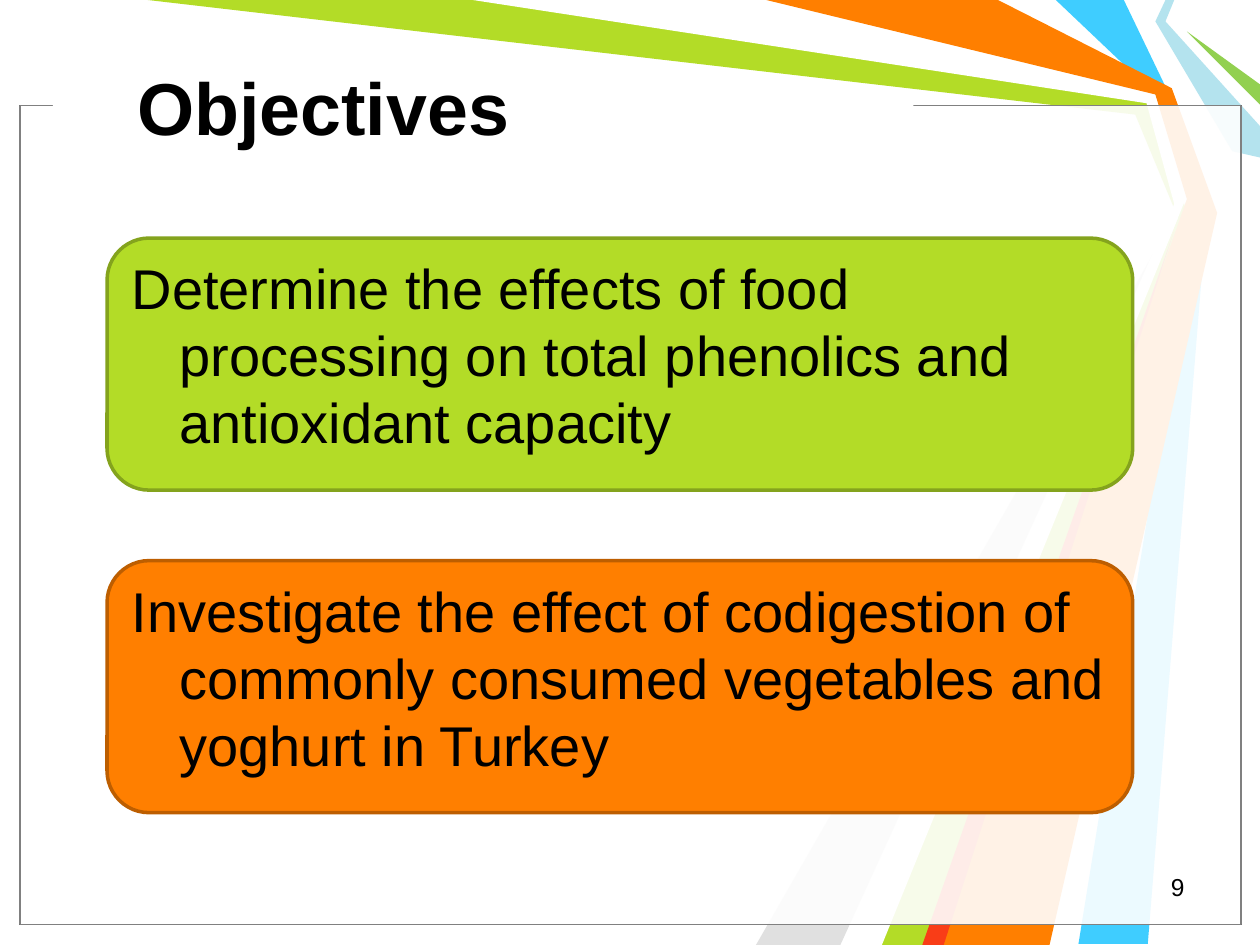
from pptx import Presentation
from pptx.dml.color import RGBColor
from pptx.enum.shapes import MSO_SHAPE
from pptx.enum.text import MSO_ANCHOR, PP_ALIGN
from pptx.oxml.ns import qn
from pptx.util import Pt
from lxml import etree

PX = 9144
TITLE_ONLY = 5
RECTANGLE = MSO_SHAPE.RECTANGLE
ROUNDED = MSO_SHAPE.ROUNDED_RECTANGLE
TOP, MIDDLE = MSO_ANCHOR.TOP, MSO_ANCHOR.MIDDLE
LEFT, RIGHT = PP_ALIGN.LEFT, PP_ALIGN.RIGHT
FONT = "Arial"
BLACK, WHITE, GRAY = "000000", "FFFFFF", "808080"
GREEN, ORANGE = "B3DC27", "FF7F00"

RIBBONS = [
    ("3FCDFF", [(892, 0), (929, 77), (958, 167), (911, 749), (856, 749),
                (950, 167), (917, 75), (838, 0)]),
    (GREEN, [(117, 0), (383, 0), (914, 78), (942, 169), (742, 750),
             (692, 750), (935, 173), (901, 91)]),
    ("E0E0E0", [(667, 750), (927, 181), (600, 750)]),
    (WHITE, [(375, 0), (910, 82), (932, 162), (675, 750), (700, 750),
             (941, 158), (917, 75), (600, 0)]),
    ("B4E3EE", [(925, 0), (917, 17), (978, 120), (1000, 125), (1000, 100),
                (925, 17), (932, 0)]),
    ("92D050", [(1000, 83), (942, 25), (1000, 67)]),
    (ORANGE, [(608, 0), (792, 0), (930, 70), (966, 169), (833, 750),
              (733, 750), (942, 158), (917, 75)]),
    ("F93D17", [(732, 750), (932, 183), (749, 750)]),
]

OBJECTIVES = [
    ("Determine the effects of food processing on total phenolics "
     "and antioxidant capacity", GREEN, "84A31D"),
    ("Investigate the effect of codigestion of commonly consumed "
     "vegetables and yoghurt in Turkey", ORANGE, "BD5E00"),
]


def color(value):
    """Turn a hex string into a colour."""
    return RGBColor.from_string(value)


def place(shape, left, top, width, height):
    """Position and size a shape in px."""
    shape.left, shape.top = left * PX, top * PX
    shape.width, shape.height = width * PX, height * PX


def paint(shape, fill, line=None, weight=0.75):
    """Give a shape a flat fill and an optional outline."""
    shape.shadow.inherit = False
    shape.fill.solid()
    shape.fill.fore_color.rgb = color(fill)
    if line:
        shape.line.color.rgb = color(line)
        shape.line.width = Pt(weight)
    else:
        shape.line.fill.background()


def add_box(slide, kind, box, fill, line=None, weight=0.75):
    """Add a painted preset shape in the given box."""
    shape = slide.shapes.add_shape(kind, *(value * PX for value in box))
    paint(shape, fill, line, weight)
    return shape


def write(shape, text, size, align, anchor, bold=False):
    """Write one paragraph into a shape and return the paragraph."""
    frame = shape.text_frame
    frame.word_wrap = True
    frame.vertical_anchor = anchor
    paragraph = frame.paragraphs[0]
    paragraph.alignment = align
    run = paragraph.add_run()
    run.text = text
    run.font.name = FONT
    run.font.size = Pt(size)
    run.font.bold = bold
    run.font.color.rgb = color(BLACK)
    return paragraph


def add_ribbons(slide, left, top):
    """Draw the coloured ribbons from the given corner."""
    for fill, points in RIBBONS:
        corners = [(left + x, top + y) for x, y in points]
        builder = slide.shapes.build_freeform(*corners[0], scale=PX)
        builder.add_line_segments(corners[1:], close=True)
        paint(builder.convert_to_shape(), fill)


def add_frame(slide, left, top, width, height):
    """Draw the two translucent panels and the gap behind the title."""
    for line in (BLACK, GRAY):
        panel = add_box(slide, RECTANGLE, (left, top, width, height), WHITE, line)
        fill = panel.fill.fore_color._xFill
        etree.SubElement(fill.find(qn("a:srgbClr")), qn("a:alpha"), val="69000")
    add_box(slide, RECTANGLE, (left + 26, top - 10, 683, 17), WHITE)


def add_title(slide, left, top, width, height):
    """Fill the title placeholder and bring it to the front."""
    title = slide.shapes.title
    place(title, left, top, width, height)
    write(title, "Objectives", 42, LEFT, MIDDLE, bold=True)
    slide.shapes._spTree.append(title._element)


def add_objectives(slide, left, top, width, height, gap):
    """Stack one rounded card for each objective."""
    for index, (text, fill, line) in enumerate(OBJECTIVES):
        box = (left, top + index * (height + gap), width, height)
        card = add_box(slide, ROUNDED, box, fill, line, 2)
        card.text_frame.margin_top = 3 * PX
        paragraph = write(card, text, 32, LEFT, TOP)
        paragraph.line_spacing = Pt(38.3)
        properties = paragraph._p.get_or_add_pPr()
        properties.set("marL", str(38 * PX))
        properties.set("indent", str(-38 * PX))


def add_page_number(slide, left, top, width, height):
    """Add the page number at the lower right."""
    box = slide.shapes.add_textbox(*(value * PX for value in (left, top, width, height)))
    write(box, "9", 14, RIGHT, TOP)


def main():
    """Build and save the slide."""
    presentation = Presentation()
    presentation.slide_width, presentation.slide_height = 1000 * PX, 750 * PX
    slide = presentation.slides.add_slide(presentation.slide_layouts[TITLE_ONLY])
    add_ribbons(slide, 0, 0)
    add_frame(slide, 16, 84, 969, 650)
    add_title(slide, 99, 22, 689, 125)
    add_page_number(slide, 717, 687, 233, 33)
    add_objectives(slide, 85, 189, 814, 200, 56)
    presentation.save("out.pptx")


if __name__ == "__main__":
    main()
